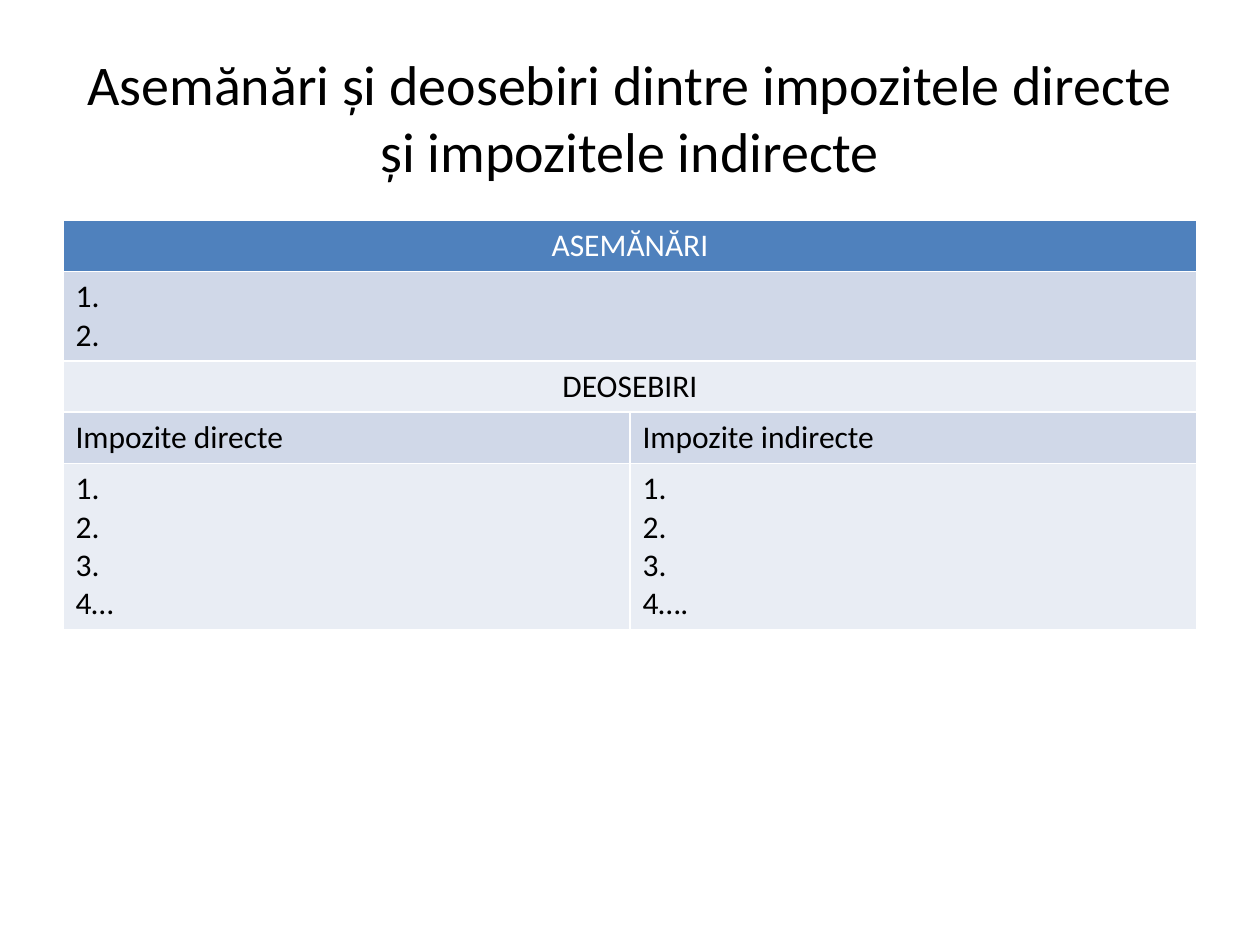
from dataclasses import dataclass

from pptx import Presentation
from pptx.dml.color import RGBColor as RGB
from pptx.enum.text import MSO_ANCHOR as ANCHOR, MSO_AUTO_SIZE as AUTO, PP_ALIGN as ALIGN
from pptx.util import Pt


@dataclass(frozen=True)
class Theme:
    font: str = "Calibri"
    title_size: int = 32
    table_size: int = 18
    ink: str = "000000"
    white: str = "FFFFFF"
    header: str = "4F81BD"
    bands: tuple = ("E9EDF4", "D0D8E8")


class Builder:
    """Draws styled elements on the current slide."""

    def __init__(self, theme, prs):
        self.theme = theme
        self.s = prs.slides.add_slide(prs.slide_layouts[5])

    def add_lines(self, tf, lines, size, color, align):
        for i, line in enumerate(lines):
            p = tf.paragraphs[0] if i == 0 else tf.add_paragraph()
            p.alignment = align
            r = p.add_run()
            r.text = line
            r.font.name = self.theme.font
            r.font.size = Pt(size)
            r.font.bold = False
            r.font.color.rgb = RGB.from_string(color)

    def title(self, text, left, top, width, height):
        sp = self.s.shapes.title
        sp.left, sp.top, sp.width, sp.height = map(Pt, (left, top, width, height))
        tf = sp.text_frame
        tf.word_wrap = True
        tf.auto_size = AUTO.NONE
        tf.vertical_anchor = ANCHOR.MIDDLE
        self.add_lines(tf, [text], self.theme.title_size, self.theme.ink, ALIGN.CENTER)

    def table(self, rows, left, top, width, row_height):
        cols = max(len(cells) for _, cells in rows)
        frame = self.s.shapes.add_table(
            len(rows), cols, Pt(left), Pt(top), Pt(width), Pt(row_height * len(rows)))
        tbl = frame.table
        for i, (align, cells) in enumerate(rows):
            if len(cells) < cols:
                tbl.cell(i, 0).merge(tbl.cell(i, cols - 1))
            fill = self.theme.bands[i % 2] if i else self.theme.header
            color = self.theme.ink if i else self.theme.white
            for j in range(cols):
                cell = tbl.cell(i, j)
                cell.fill.solid()
                cell.fill.fore_color.rgb = RGB.from_string(fill)
                if j < len(cells):
                    self.add_lines(cell.text_frame, cells[j], self.theme.table_size, color, align)


def main():
    prs = Presentation()
    prs.slide_width, prs.slide_height = Pt(720), Pt(540)
    b = Builder(Theme(), prs)
    b.title("Asemănări și deosebiri dintre impozitele directe și impozitele indirecte",
            36, 21.6, 648, 90)
    b.table([
        (ALIGN.CENTER, [["ASEMĂNĂRI"]]),
        (ALIGN.LEFT, [["1.", "2."]]),
        (ALIGN.CENTER, [["DEOSEBIRI"]]),
        (ALIGN.LEFT, [["Impozite directe"], ["Impozite indirecte"]]),
        (ALIGN.LEFT, [["1.", "2.", "3.", "4…"], ["1.", "2.", "3.", "4…."]]),
    ], 36, 126, 648, 29.2)
    prs.save("out.pptx")


if __name__ == "__main__":
    main()
